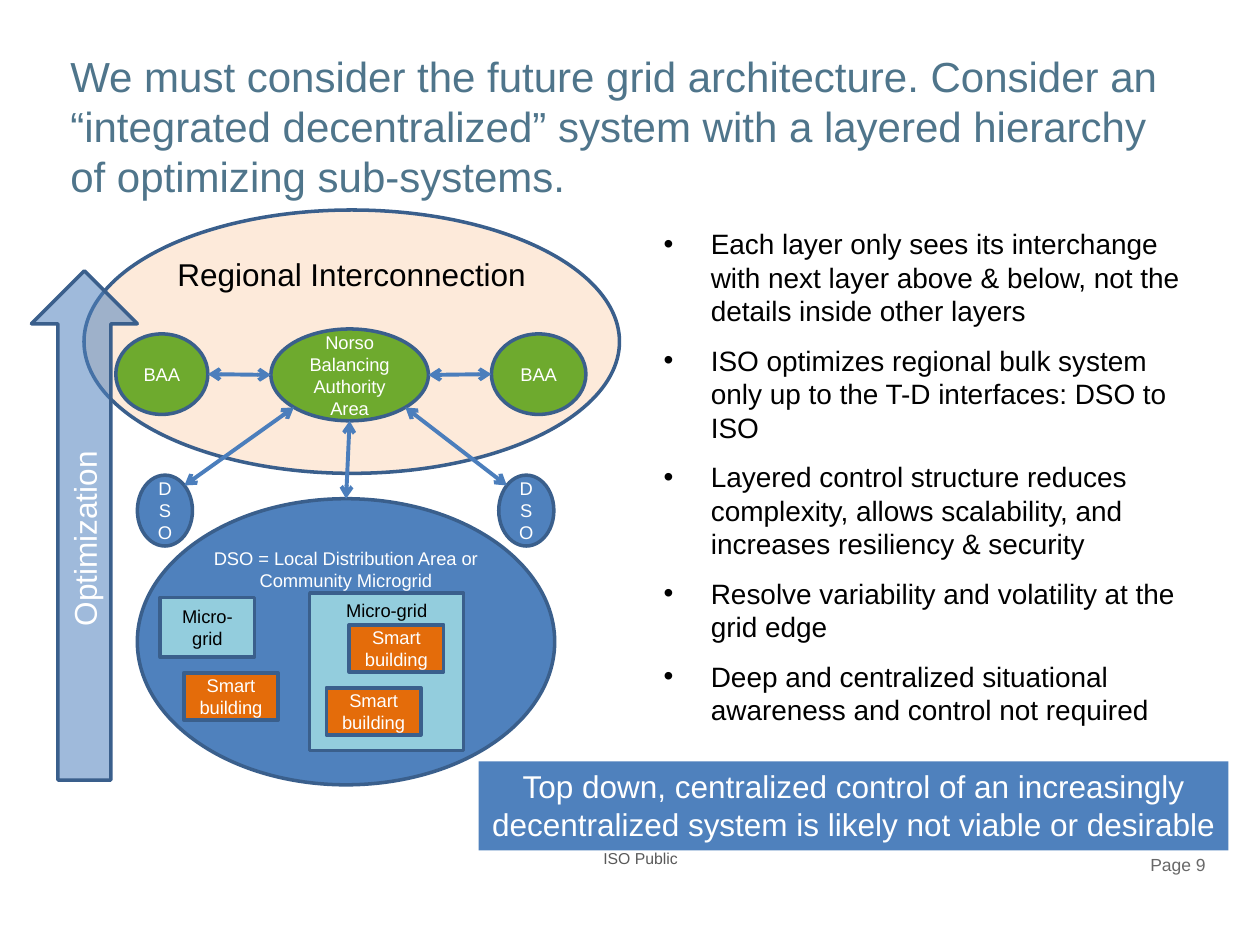
from lxml import etree
from pptx import Presentation
from pptx.dml.color import RGBColor
from pptx.enum.shapes import MSO_CONNECTOR, MSO_SHAPE
from pptx.enum.text import MSO_ANCHOR, MSO_AUTO_SIZE, PP_ALIGN
from pptx.oxml.ns import qn
from pptx.util import Pt

OVAL, RECT, ARROW = MSO_SHAPE.OVAL, MSO_SHAPE.RECTANGLE, MSO_SHAPE.UP_ARROW
TOP, MID = MSO_ANCHOR.TOP, MSO_ANCHOR.MIDDLE
LEFT, MID_X, RIGHT = PP_ALIGN.LEFT, PP_ALIGN.CENTER, PP_ALIGN.RIGHT
FIXED = MSO_AUTO_SIZE.NONE
LINE = MSO_CONNECTOR.STRAIGHT

BLUE, EDGE, WIRE = "4F81BD", "3A5F8C", "4B7EBC"
GREEN, AQUA, RUST, PEACH = "6EAA2E", "93CDDD", "E46C0A", "FDEADA"
WHITE, BLACK = "FFFFFF", "000000"
NEAR, FAR = 0.146, 0.854

TITLE = ("We must consider the future grid architecture. Consider an “integrated "
         "decentralized” system with a layered hierarchy of optimizing sub-systems.")
POINTS = [
    "Each layer only sees its interchange with next layer above & below, "
    "not the details inside other layers",
    "ISO optimizes regional bulk system only up to the T-D interfaces: DSO to ISO",
    "Layered control structure reduces complexity, allows scalability, "
    "and increases resiliency & security",
    "Resolve variability and volatility at the grid edge",
    "Deep and centralized situational awareness and control not required",
]
CLAIM = ("Top down, centralized control of an increasingly decentralized system "
         "is likely not viable or desirable")


def tint(code):
    return RGBColor.from_string(code)


def apply(item, form):
    for name, value in form.items():
        setattr(item, name, value)


def place(shape, box):
    apply(shape, dict(zip(("left", "top", "width", "height"), map(Pt, box))))


def write(shape, lines, size, color, align=MID_X, anchor=TOP, gap=0):
    frame = shape.text_frame
    apply(frame, {"word_wrap": True, "auto_size": FIXED, "vertical_anchor": anchor})
    frame.text = "\n".join(lines)
    for index, para in enumerate(frame.paragraphs):
        apply(para, {"alignment": align, "space_before": Pt(gap if index else 0)})
        apply(para.font, {"name": "Arial", "size": Pt(size)})
        para.font.color.rgb = tint(color)


def add_block(slide, kind, box, fill, text, size=10.5, color=WHITE, anchor=MID, edge=EDGE):
    shape = slide.shapes.add_shape(kind, *map(Pt, box))
    shape.shadow.inherit = False
    shape.fill.solid()
    shape.fill.fore_color.rgb = tint(fill)
    if edge:
        shape.line.color.rgb = tint(edge)
        shape.line.width = Pt(2)
    else:
        shape.line.fill.background()
    write(shape, [text], size, color, anchor=anchor)
    return shape


def add_label(slide, box, text, size, color, align):
    write(slide.shapes.add_textbox(*map(Pt, box)), [text], size, color, align)


def spot(shape, across, down):
    return (int(shape.left + across * shape.width), int(shape.top + down * shape.height))


def add_link(slide, start, end):
    link = slide.shapes.add_connector(LINE, *start, *end)
    link.line.color.rgb = tint(WIRE)
    link.line.width = Pt(2.25)
    for name in ("a:headEnd", "a:tailEnd"):
        etree.SubElement(link.line._get_or_add_ln(), qn(name), type="arrow")
    etree.SubElement(link._element.spPr, qn("a:effectLst"))


def add_arrow(slide):
    shape = add_block(slide, ARROW, (18, 154.8, 60.5, 291), BLUE, "Optimization", 18)
    shade = shape._element.spPr.find(qn("a:solidFill"))[0]
    etree.SubElement(shade, qn("a:alpha"), val="54000")
    shape.text_frame._txBody.bodyPr.set("vert", "vert270")


def draw_grid(slide):
    area = add_block(slide, OVAL, (78.5, 285, 238.5, 163.5), BLUE,
                     "DSO = Local Distribution Area or Community Microgrid", anchor=TOP)
    add_block(slide, OVAL, (48, 120, 306, 150.5), PEACH,
              "Regional Interconnection", 18, BLACK, TOP)
    add_block(slide, RECT, (91.5, 341.5, 54, 34), AQUA, "Micro-grid", color=BLACK)
    add_block(slide, RECT, (177, 339, 88, 90), AQUA, "Micro-grid", color=BLACK, anchor=TOP)
    for left, top in ((105, 384.5), (186.5, 393), (199.5, 357)):
        add_block(slide, RECT, (left, top, 54, 27), RUST, "Smart building")

    west, east = [add_block(slide, OVAL, (left, 271.5, 31.5, 40.5), BLUE, "DSO")
                  for left in (78.5, 285)]
    hub = add_block(slide, OVAL, (154.8, 188, 90, 52.5), GREEN,
                    "Norso Balancing Authority Area")
    left, right = [add_block(slide, OVAL, (x, 190.8, wide, 46), GREEN, "BAA")
                   for x, wide in ((66.2, 52.6), (280.8, 54))]

    for start, end in (
        (spot(left, 1, 0.5), spot(hub, 0, 0.5)),
        (spot(hub, 1, 0.5), spot(right, 0, 0.5)),
        (spot(area, 0.5, 0), spot(hub, 0.5, 1)),
        (spot(east, NEAR, NEAR), spot(hub, FAR, FAR)),
        (spot(west, FAR, NEAR), spot(hub, NEAR, FAR)),
    ):
        add_link(slide, start, end)
    add_arrow(slide)


def main():
    deck = Presentation()
    apply(deck, {"slide_width": Pt(720), "slide_height": Pt(540)})
    slide = deck.slides.add_slide(deck.slide_layouts[1])
    title, body = slide.placeholders
    place(title, (33, 25, 651, 58.5))
    write(title, [TITLE], 24, "4F758B", LEFT)
    place(body, (372, 126, 320, 300))
    write(body, POINTS, 16, BLACK, LEFT, gap=9)
    add_label(slide, (234, 481.5, 264, 18), "ISO Public", 9, "595959", MID_X)
    add_label(slide, (570, 484.5, 126, 21.5), "Page 9", 10, "686868", RIGHT)
    draw_grid(slide)
    add_block(slide, RECT, (273.5, 435, 428.5, 51), BLUE, CLAIM, 18, anchor=TOP, edge=None)
    deck.save("out.pptx")


if __name__ == "__main__":
    main()
